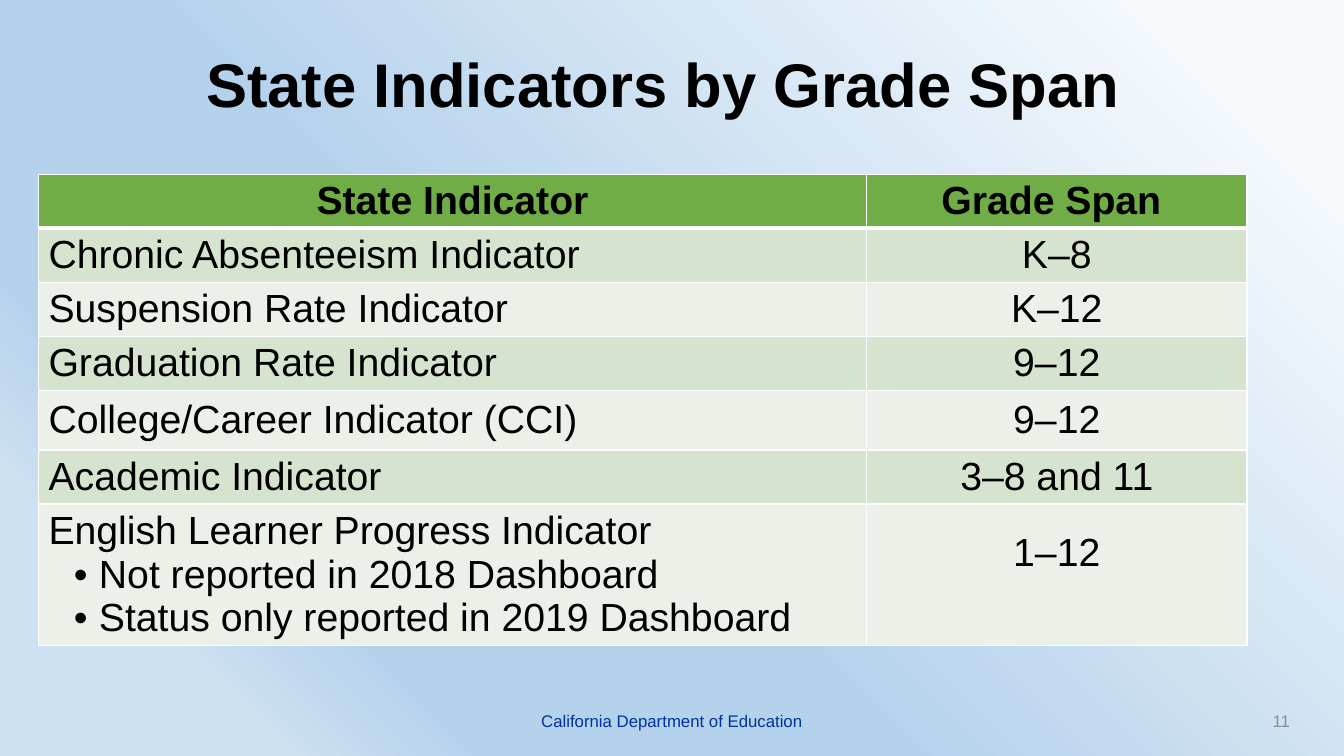
from dataclasses import dataclass

import lxml.etree
import pptx
import pptx.dml.color
import pptx.enum.text
import pptx.oxml
import pptx.oxml.ns
import pptx.util

Pt = pptx.util.Pt
RGB = pptx.dml.color.RGBColor
Align = pptx.enum.text.PP_ALIGN
Middle = pptx.enum.text.MSO_ANCHOR.MIDDLE
qn = pptx.oxml.ns.qn

FONT = "Arial"
BLACK = RGB(0x00, 0x00, 0x00)
WHITE = RGB(0xFF, 0xFF, 0xFF)
NAVY = RGB(0x00, 0x33, 0x99)
GRAY = RGB(0x8C, 0x8C, 0x8C)
GREEN = RGB(0x70, 0xAD, 0x47)
BANDS = (RGB(0xD5, 0xE3, 0xCF), RGB(0xEB, 0xF1, 0xE9))
STOPS = (
    (8, RGB(0xF7, 0xFA, 0xFD)),
    (57, RGB(0xB5, 0xD2, 0xEC)),
    (77, RGB(0xB5, 0xD2, 0xEC)),
    (87, RGB(0xCE, 0xE1, 0xF2)),
)


@dataclass(frozen=True)
class Label:
    text: str
    left: float
    top: float
    width: float
    height: float
    size: float
    color: RGB
    align: Align
    bold: bool = False
    space: float = 1.0


@dataclass(frozen=True)
class Entry:
    name: str
    span: str
    height: float = 38.6
    notes: tuple[str, ...] = ()


LABELS = (
    Label("State Indicators by Grade Span ", 0, 0, 960, 124.5, 44, BLACK,
          Align.CENTER, True, 0.9),
    Label("California Department of Education", 318, 500.5, 324, 28.75, 12,
          NAVY, Align.CENTER),
    Label("11", 712.5, 500.5, 216, 28.75, 12, GRAY, Align.RIGHT),
)
ENTRIES = (
    Entry("State Indicator", "Grade Span "),
    Entry("Chronic Absenteeism Indicator", "K–8"),
    Entry("Suspension Rate Indicator", "K–12"),
    Entry("Graduation Rate Indicator", "9–12"),
    Entry("College/Career Indicator (CCI)", "9–12", 42.6),
    Entry("Academic Indicator", "3–8 and 11"),
    Entry("English Learner Progress Indicator", "1–12", 101,
          ("Not reported in 2018 Dashboard",
           "Status only reported in 2019 Dashboard")),
)
WIDTHS = (591.5, 271.75)
LEFT, TOP = 27.5, 124.5


def write(para, text: str, size: float, color: RGB, bold: bool,
          align: Align) -> None:
    para.alignment = align
    run = para.add_run()
    run.text = text
    font = run.font
    font.name, font.size, font.bold = FONT, Pt(size), bold
    font.color.rgb = color


def paint(slide) -> None:
    """Fill the background with the diagonal gradient."""
    fill = slide.background.fill
    fill.gradient()
    fill.gradient_angle = 225
    stops = slide.background._cSld.find(".//" + qn("a:gsLst"))
    for old in list(stops):
        stops.remove(old)
    for place, color in STOPS:
        stop = lxml.etree.SubElement(stops, qn("a:gs"), pos=str(place * 1000))
        lxml.etree.SubElement(stop, qn("a:srgbClr"), val=str(color))


def add_label(slide, label: Label) -> None:
    box = slide.shapes.add_textbox(Pt(label.left), Pt(label.top),
                                   Pt(label.width), Pt(label.height))
    frame = box.text_frame
    frame.word_wrap = True
    frame.vertical_anchor = Middle
    para = frame.paragraphs[0]
    para.line_spacing = label.space
    write(para, label.text, label.size, label.color, label.bold, label.align)


def edge(cell, side: str, width: float) -> None:
    """Draw one white border of a cell."""
    props = cell._tc.get_or_add_tcPr()
    line = lxml.etree.SubElement(props, qn("a:ln" + side), w=str(Pt(width)))
    fill = lxml.etree.SubElement(line, qn("a:solidFill"))
    lxml.etree.SubElement(fill, qn("a:srgbClr"), val=str(WHITE))


def bullet(para) -> None:
    props = para._p.get_or_add_pPr()
    props.set("marL", str(Pt(36)))
    props.set("indent", str(-Pt(18)))
    lxml.etree.SubElement(props, qn("a:buFont"), typeface=FONT)
    lxml.etree.SubElement(props, qn("a:buChar"), char="•")


def add_grid(slide) -> None:
    high = sum(entry.height for entry in ENTRIES)
    grid = slide.shapes.add_table(len(ENTRIES), len(WIDTHS), Pt(LEFT), Pt(TOP),
                                  Pt(sum(WIDTHS)), Pt(high)).table
    for col, width in zip(grid.columns, WIDTHS):
        col.width = Pt(width)
    for row, entry in enumerate(ENTRIES):
        grid.rows[row].height = Pt(entry.height)
        head = row == 0
        for col, text in enumerate((entry.name, entry.span)):
            cell = grid.cell(row, col)
            cell.vertical_anchor = Middle
            for side in "LRTB":
                thick = (row, side) in ((0, "B"), (1, "T"))
                edge(cell, side, 3 if thick else 1)
            cell.fill.solid()
            cell.fill.fore_color.rgb = GREEN if head else BANDS[(row - 1) % 2]
            align = Align.CENTER if head or col else Align.LEFT
            write(cell.text_frame.paragraphs[0], text, 28, BLACK, head, align)
        for note in entry.notes:
            para = grid.cell(row, 0).text_frame.add_paragraph()
            write(para, note, 28, BLACK, False, Align.LEFT)
            bullet(para)
        if entry.notes:
            # The span sits half a line above the middle of its cell.
            grid.cell(row, 1).margin_bottom = Pt(35)


def main() -> None:
    deck = pptx.Presentation()
    deck.slide_width, deck.slide_height = Pt(960), Pt(540)
    slide = deck.slides.add_slide(deck.slide_layouts[6])
    paint(slide)
    add_grid(slide)
    for label in LABELS:
        add_label(slide, label)
    deck.save("out.pptx")


if __name__ == "__main__":
    main()
